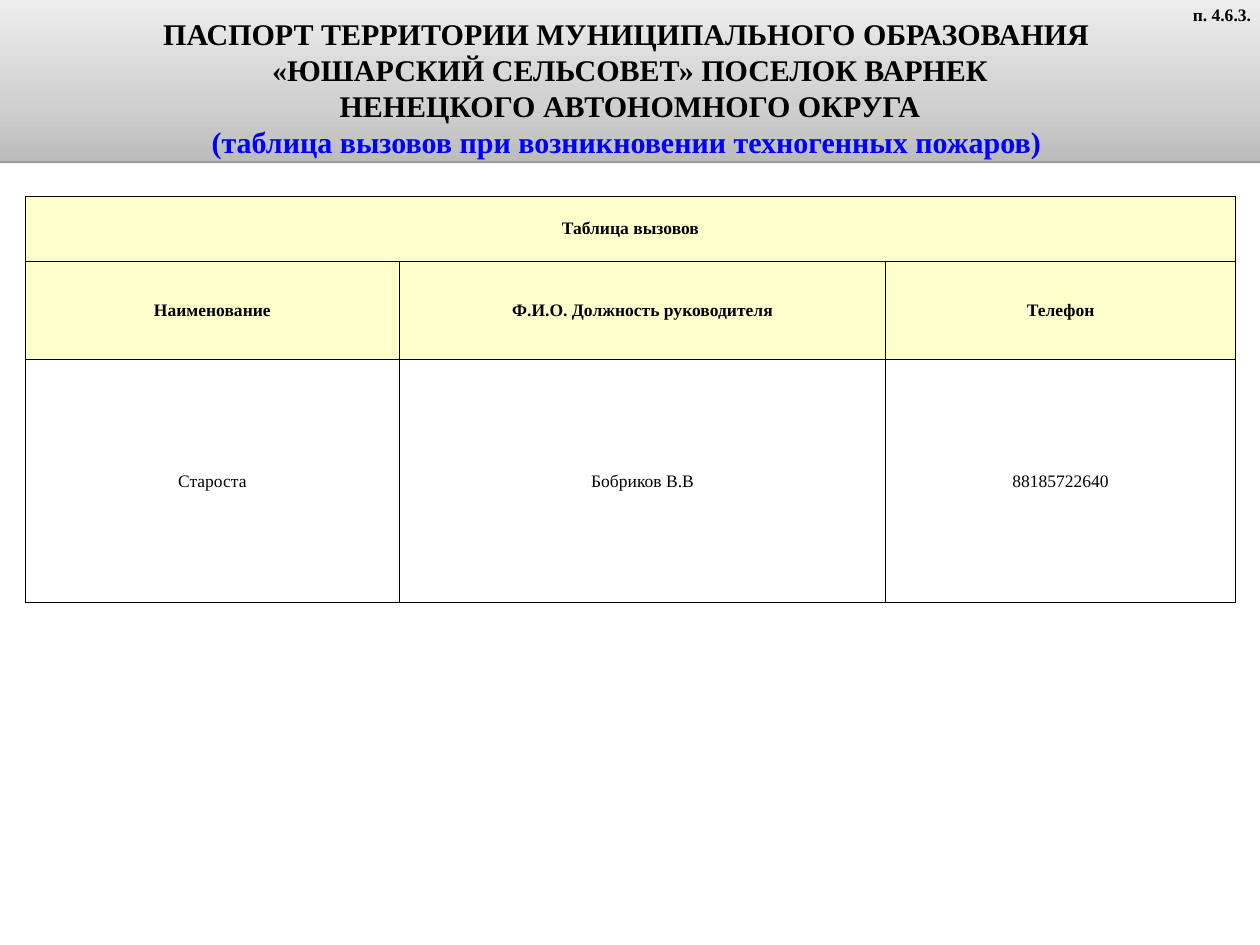
from lxml.etree import fromstring
from pptx import Presentation
from pptx.dml.color import RGBColor
from pptx.enum.text import MSO_ANCHOR, MSO_AUTO_SIZE, PP_ALIGN
from pptx.oxml.ns import nsdecls
from pptx.util import Inches, Pt

FONT = "Times New Roman"
COLORS = {
    "text": "000000",
    "subtitle": "0000FF",
    "heading": "FFFFCC",
    "body": "FFFFFF",
    "border": "000000",
    "shadow": "000000",
}
BAND_STOPS = {0: "BCBCBC", 35: "D0D0D0", 100: "EDEDED"}

TITLE_LINES = [
    (["ПАСПОРТ ТЕРРИТОРИИ МУНИЦИПАЛЬНОГО ОБРАЗОВАНИЯ ",
      "«ЮШАРСКИЙ СЕЛЬСОВЕТ» ПОСЕЛОК ВАРНЕК"], "text"),
    (["НЕНЕЦКОГО АВТОНОМНОГО ОКРУГА"], "text"),
    (["(таблица вызовов при возникновении техногенных пожаров) "], "subtitle"),
]
CALL_ROWS = [
    ["Таблица вызовов"],
    ["Наименование", "Ф.И.О. Должность руководителя", "Телефон"],
    ["Староста", "Бобриков В.В", "88185722640"],
]
HEADING_ROWS = 2
COLUMN_WIDTHS = [4.16, 5.4, 3.89]
ROW_HEIGHTS = [0.73, 1.09, 2.7]


def add_run(paragraph, text, size, color="text", bold=True):
    run = paragraph.add_run()
    run.text = text
    run.font.name = FONT
    run.font.size = Pt(size)
    run.font.bold = bold
    run.font.color.rgb = RGBColor.from_string(COLORS[color])


def style_band(band):
    """Give the header band its three-stop gradient and thin shadow."""
    stops = "".join(
        f'<a:gs pos="{position * 1000}"><a:srgbClr val="{color}"/></a:gs>'
        for position, color in BAND_STOPS.items())
    properties = band._element.spPr
    properties.append(fromstring(
        f'<a:gradFill {nsdecls("a")} rotWithShape="1"><a:gsLst>{stops}</a:gsLst>'
        '<a:lin ang="16200000" scaled="0"/></a:gradFill>'))
    properties.append(fromstring(
        f'<a:effectLst {nsdecls("a")}><a:outerShdw blurRad="0" dist="{Pt(1.6)}" '
        f'dir="5400000" rotWithShape="0"><a:srgbClr val="{COLORS["shadow"]}">'
        '<a:alpha val="38000"/></a:srgbClr></a:outerShdw></a:effectLst>'))


def add_header(slide):
    header = slide.shapes.title
    header.left, header.top = Inches(0), Inches(0)
    header.width, header.height = Inches(14), Inches(1.79)
    style_band(header)

    frame = header.text_frame
    frame.word_wrap = True
    frame.auto_size = MSO_AUTO_SIZE.NONE
    frame.vertical_anchor = MSO_ANCHOR.TOP
    frame.margin_top, frame.margin_bottom = Inches(0.17), Inches(0)
    for index, (lines, color) in enumerate(TITLE_LINES):
        paragraph = frame.add_paragraph() if index else frame.paragraphs[0]
        paragraph.alignment = PP_ALIGN.CENTER
        paragraph.line_spacing = Pt(28.8)
        for line_index, line in enumerate(lines):
            if line_index:
                paragraph.add_line_break()
            add_run(paragraph, line, 24, color)


def set_borders(cell):
    properties = cell._tc.get_or_add_tcPr()
    for index, side in enumerate(("lnL", "lnR", "lnT", "lnB")):
        properties.insert(index, fromstring(
            f'<a:{side} {nsdecls("a")} w="{Pt(1)}"><a:solidFill>'
            f'<a:srgbClr val="{COLORS["border"]}"/></a:solidFill></a:{side}>'))


def style_cell(cell, fill):
    cell.fill.solid()
    cell.fill.fore_color.rgb = RGBColor.from_string(COLORS[fill])
    cell.vertical_anchor = MSO_ANCHOR.MIDDLE
    cell.margin_left = cell.margin_right = Inches(0.03)
    cell.margin_top = cell.margin_bottom = Inches(0.03)
    set_borders(cell)


def add_call_table(slide):
    calls = slide.shapes.add_table(
        len(ROW_HEIGHTS), len(COLUMN_WIDTHS), Inches(0.28), Inches(2.18),
        Inches(sum(COLUMN_WIDTHS)), Inches(sum(ROW_HEIGHTS))).table
    for column, width in zip(calls.columns, COLUMN_WIDTHS):
        column.width = Inches(width)
    for row, height in zip(calls.rows, ROW_HEIGHTS):
        row.height = Inches(height)

    # The table heading spans all columns
    calls.cell(0, 0).merge(calls.cell(0, len(COLUMN_WIDTHS) - 1))
    for row_index, texts in enumerate(CALL_ROWS):
        is_heading = row_index < HEADING_ROWS
        for cell in calls.rows[row_index].cells:
            style_cell(cell, "heading" if is_heading else "body")
        for column_index, text in enumerate(texts):
            paragraph = calls.cell(row_index, column_index).text_frame.paragraphs[0]
            paragraph.alignment = PP_ALIGN.CENTER
            add_run(paragraph, text, 14, bold=is_heading)


def add_section_number(slide, text):
    number = slide.shapes.add_textbox(
        Inches(13.06), Inches(0), Inches(0.94), Inches(0.33))
    number.text_frame.word_wrap = True
    paragraph = number.text_frame.paragraphs[0]
    paragraph.alignment = PP_ALIGN.RIGHT
    add_run(paragraph, text, 14)


def main():
    presentation = Presentation()
    presentation.slide_width = Inches(14)
    presentation.slide_height = Inches(10.5)
    slide = presentation.slides.add_slide(presentation.slide_layouts[5])

    add_header(slide)
    add_call_table(slide)
    add_section_number(slide, "п. 4.6.3.")

    presentation.save("out.pptx")


if __name__ == "__main__":
    main()
